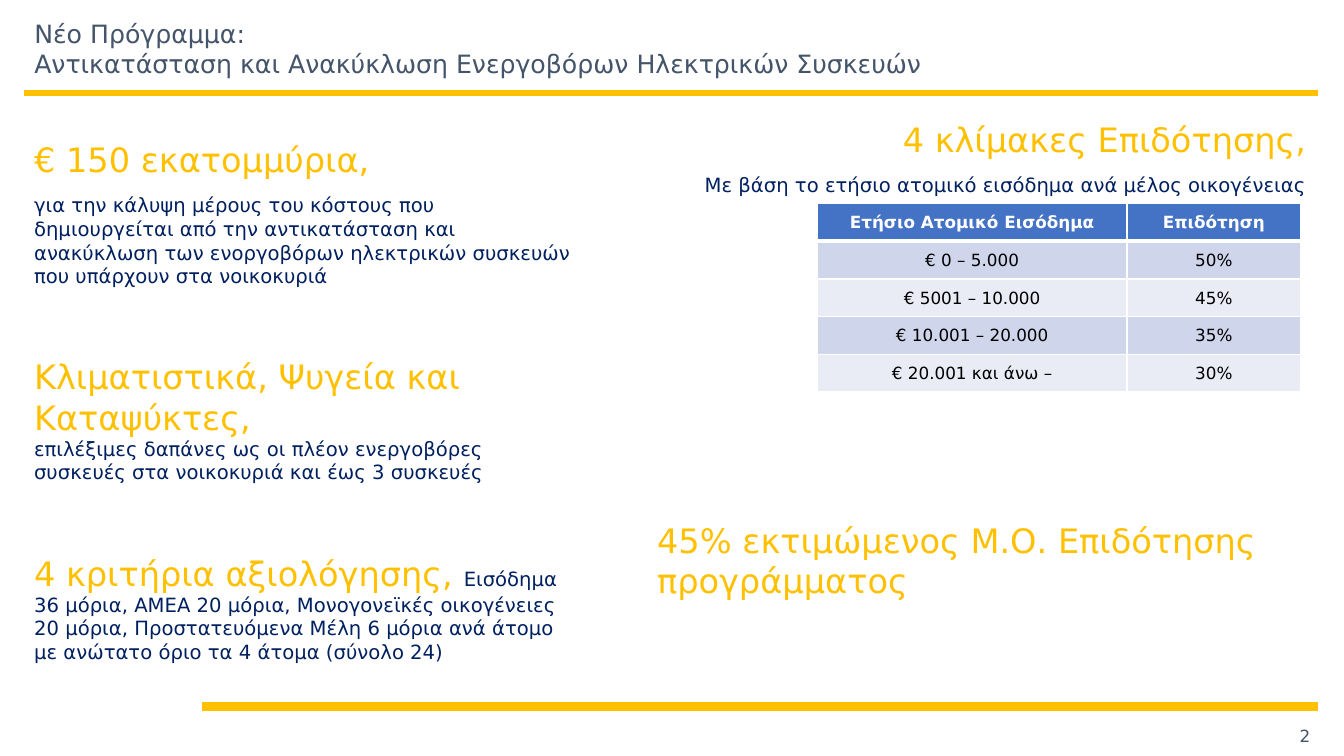
from lxml import etree
from pptx import Presentation
from pptx.dml.color import RGBColor
from pptx.enum.shapes import MSO_CONNECTOR
from pptx.enum.text import MSO_ANCHOR, MSO_AUTO_SIZE, PP_ALIGN
from pptx.oxml import parse_xml
from pptx.oxml.ns import nsdecls, qn
from pptx.util import Cm, Pt

LEFT, CENTER, RIGHT = PP_ALIGN.LEFT, PP_ALIGN.CENTER, PP_ALIGN.RIGHT
MIDDLE, TOP = MSO_ANCHOR.MIDDLE, MSO_ANCHOR.TOP
FONT = "DejaVu Sans"
GOLD, NAVY, SLATE, WHITE, BLACK = "FFC000", "002060", "44546A", "FFFFFF", "000000"
HEADER_BLUE, BAND_DARK, BAND_LIGHT = "4472C4", "CFD5EA", "E9EBF5"
HEADING, BODY, NUMBER = (24, GOLD), (14, NAVY), (12, SLATE)
BREAK = "\v"


def style_font(font, size, color, bold=False):
    font.name = FONT
    font.size = Pt(size)
    font.bold = bold
    font.color.rgb = RGBColor.from_string(color)


def add_text(s, box, paragraphs, align=LEFT, anchor=TOP):
    """Add a text box; each paragraph is (space before in points, [(text, style), ...])."""
    tf = s.shapes.add_textbox(*map(Cm, box)).text_frame
    tf.word_wrap = True
    tf.auto_size = MSO_AUTO_SIZE.NONE
    tf.vertical_anchor = anchor
    for i, (space, runs) in enumerate(paragraphs):
        p = tf.add_paragraph() if i else tf.paragraphs[0]
        p.alignment = align
        p.space_before = Pt(space)
        for text, style in runs:
            if text == BREAK:
                p.add_line_break()
                continue
            r = p.add_run()
            r.text = text
            style_font(r.font, *style)


prs = Presentation()
prs.slide_width, prs.slide_height = Cm(33.87), Cm(19.05)
s = prs.slides.add_slide(prs.slide_layouts[5])

# Rules under the title and above the page number
for left, y, width in [(0.61, 2.34, 4.5), (5.1, 17.8, 6)]:
    rule = s.shapes.add_connector(MSO_CONNECTOR.STRAIGHT, Cm(left), Cm(y), Cm(33.22), Cm(y))
    rule.line.color.rgb = RGBColor.from_string(GOLD)
    rule.line.width = Pt(width)
    etree.SubElement(rule._element.spPr, qn("a:effectLst"))

# Title
title = s.shapes.title
title.left, title.top, title.width, title.height = Cm(0.61), Cm(0.33), Cm(32.56), Cm(1.78)
tf = title.text_frame
tf.text = "Νέο Πρόγραμμα:\vΑντικατάσταση και Ανακύκλωση Ενεργοβόρων Ηλεκτρικών Συσκευών"
tf.word_wrap = True
tf.auto_size = MSO_AUTO_SIZE.NONE
tf.vertical_anchor = MIDDLE
tf.paragraphs[0].alignment = LEFT
for r in tf.paragraphs[0].runs:
    style_font(r.font, 18, SLATE)

# Left column: budget, eligible appliances, criteria
add_text(s, (0.61, 3.38, 14.22, 13.9), [
    (0, [("€ 150 εκατομμύρια,", HEADING)]),
    (10, [("για την κάλυψη μέρους του κόστους που δημιουργείται από την αντικατάσταση και "
           "ανακύκλωση των ενοργοβόρων ηλεκτρικών συσκευών που υπάρχουν στα νοικοκυριά", BODY)]),
    (49, [("Κλιματιστικά, Ψυγεία και Καταψύκτες,", HEADING),
          (BREAK, None),
          ("επιλέξιμες δαπάνες ως οι πλέον ενεργοβόρες συσκευές στα νοικοκυριά "
           "και έως 3 συσκευές", BODY)]),
    (49, [("4 κριτήρια αξιολόγησης, ", HEADING),
          ("Εισόδημα 36 μόρια, ΑΜΕΑ 20 μόρια, Μονογονεϊκές οικογένειες 20 μόρια, "
           "Προστατευόμενα Μέλη 6 μόρια ανά άτομο με ανώτατο όριο τα 4 άτομα "
           "(σύνολο 24)", BODY)]),
])

# Right column: subsidy scales and average
add_text(s, (16.05, 2.87, 17.12, 1.78), [
    (0, [("4 κλίμακες Επιδότησης,", HEADING)]),
    (10, [("Με βάση το ετήσιο ατομικό εισόδημα ανά μέλος οικογένειας", BODY)]),
], RIGHT)
add_text(s, (16.31, 12.98, 17.27, 2.31),
         [(0, [("45% εκτιμώμενος Μ.Ο. Επιδότησης προγράμματος", HEADING)])])
add_text(s, (25.65, 18.03, 7.62, 1.02), [(0, [("2", NUMBER)])], RIGHT, MIDDLE)

# Subsidy table
scales = [
    ("Ετήσιο Ατομικό Εισόδημα", "Επιδότηση"),
    ("€ 0 – 5.000", "50%"),
    ("€ 5001 – 10.000", "45%"),
    ("€ 10.001 – 20.000", "35%"),
    ("€ 20.001 και άνω –", "30%"),
]
col_widths = [7.8, 4.38]
row_height = 0.95
table = s.shapes.add_table(len(scales), len(col_widths), Cm(20.6), Cm(5.13),
                           Cm(sum(col_widths)), Cm(row_height * len(scales))).table
for column, width in zip(table.columns, col_widths):
    column.width = Cm(width)
for i, values in enumerate(scales):
    table.rows[i].height = Cm(row_height)
    header = i == 0
    fill = HEADER_BLUE if header else BAND_DARK if i % 2 else BAND_LIGHT
    borders = {"lnL": 1, "lnR": 1, "lnT": 3 if i == 1 else 1, "lnB": 3 if header else 1}
    for j, value in enumerate(values):
        cell = table.cell(i, j)
        tcPr = cell._tc.get_or_add_tcPr()
        for side, width in borders.items():
            tcPr.append(parse_xml(
                f'<a:{side} {nsdecls("a")} w="{Pt(width)}"><a:solidFill>'
                f'<a:srgbClr val="{WHITE}"/></a:solidFill></a:{side}>'))
        cell.fill.solid()
        cell.fill.fore_color.rgb = RGBColor.from_string(fill)
        cell.margin_left = cell.margin_right = cell.margin_top = Cm(0.03)
        cell.margin_bottom = 0
        cell.vertical_anchor = MIDDLE
        cell.text_frame.text = value
        p = cell.text_frame.paragraphs[0]
        p.alignment = CENTER
        style_font(p.runs[0].font, 12, WHITE if header else BLACK, header)

prs.save("out.pptx")
